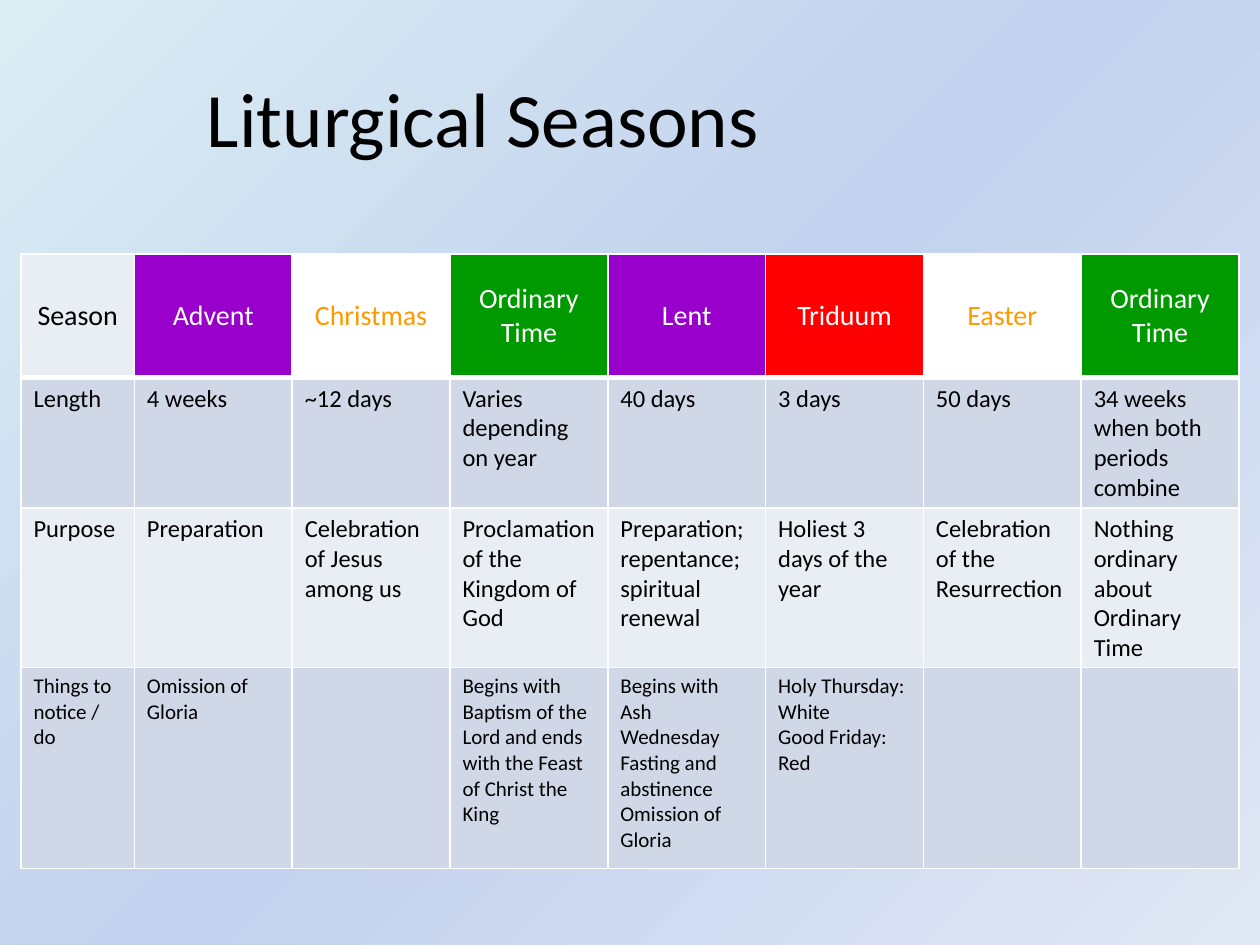
from copy import deepcopy

from pptx import Presentation
from pptx.dml.color import RGBColor
from pptx.enum.text import MSO_ANCHOR as Anchor, PP_ALIGN as Align
from pptx.oxml import parse_xml
from pptx.oxml.ns import nsdecls, qn
from pptx.util import Pt

BLACK = RGBColor(0, 0, 0)
WHITE = RGBColor(255, 255, 255)
PURPLE = RGBColor(0x99, 0x00, 0xCC)
GREEN = RGBColor(0x00, 0x99, 0x00)
RED = RGBColor(0xFF, 0x00, 0x00)
GOLD = RGBColor(0xFF, 0x99, 0x00)
PALE = RGBColor(0xE9, 0xED, 0xF4)
BLUE = RGBColor(0xD0, 0xD8, 0xE8)
SKY = [
    (0, RGBColor(0xDB, 0xEE, 0xF4)),
    (0.5, RGBColor(0xC2, 0xD1, 0xED)),
    (1, RGBColor(0xE1, 0xE8, 0xF5)),
]
FONT = "Calibri"

SEASONS = [
    ("Season", PALE, BLACK),
    ("Advent", PURPLE, WHITE),
    ("Christmas", WHITE, GOLD),
    ("Ordinary Time", GREEN, WHITE),
    ("Lent", PURPLE, WHITE),
    ("Triduum", RED, WHITE),
    ("Easter", WHITE, GOLD),
    ("Ordinary Time", GREEN, WHITE),
]
DETAILS = [
    (14, BLUE, [
        "Length", "4 weeks", "~12 days", "Varies depending on year",
        "40 days", "3 days", "50 days", "34 weeks when both periods combine",
    ]),
    (14, PALE, [
        "Purpose", "Preparation", "Celebration of Jesus among us",
        "Proclamation of the Kingdom of God",
        "Preparation; repentance; spiritual renewal",
        "Holiest 3 days of the year", "Celebration of the Resurrection",
        "Nothing ordinary about Ordinary Time",
    ]),
    (12, BLUE, [
        "Things to notice / do", "Omission of Gloria", "",
        "Begins with Baptism of the Lord and ends with the Feast of Christ the King",
        "Begins with Ash Wednesday\nFasting and abstinence\nOmission of Gloria",
        "Holy Thursday: White\nGood Friday: Red", "", "",
    ]),
]
ROW_HEIGHTS = [70.5, 48, 79, 115]
LABEL_WIDTH = 64.8


def paint_background(page):
    """Fill the page with a diagonal gradient of three colours."""
    fill = page.background.fill
    fill.gradient()
    stops = page.element.find(".//" + qn("a:gsLst"))
    stops.append(deepcopy(stops[-1]))
    for stop, (position, color) in zip(fill.gradient_stops, SKY):
        stop.position = position
        stop.color.rgb = color
    fill.gradient_angle = 315


def write_text(frame, text, size, color, align):
    """Write the lines of text as paragraphs in one style."""
    frame.text = text
    for para in frame.paragraphs:
        para.alignment = align
        para.font.name = FONT
        para.font.size = Pt(size)
        para.font.color.rgb = color


def add_title(page, left, top, width, height):
    """Place the centred heading in its box."""
    frame = page.shapes.add_textbox(Pt(left), Pt(top), Pt(width), Pt(height)).text_frame
    frame.word_wrap = True
    frame.vertical_anchor = Anchor.MIDDLE
    write_text(frame, "Liturgical Seasons", 44, BLACK, Align.CENTER)


def style_cell(cell, fill, bottom):
    """Give a cell white borders and a solid fill."""
    borders = cell._tc.get_or_add_tcPr()
    for side, width in (("L", 1), ("R", 1), ("T", 1), ("B", bottom)):
        borders.append(parse_xml(
            f'<a:ln{side} {nsdecls("a")} w="{Pt(width)}"><a:solidFill>'
            f'<a:srgbClr val="{WHITE}"/></a:solidFill></a:ln{side}>'
        ))
    cell.fill.solid()
    cell.fill.fore_color.rgb = fill


def add_seasons_table(page, left, top, width, height):
    """Place the table with a header of seasons and rows of details."""
    count = len(SEASONS)
    table = page.shapes.add_table(
        len(ROW_HEIGHTS), count, Pt(left), Pt(top), Pt(width), Pt(height)
    ).table
    for row, row_height in zip(table.rows, ROW_HEIGHTS):
        row.height = Pt(row_height)
    for index, column in enumerate(table.columns):
        column.width = Pt((width - LABEL_WIDTH) / (count - 1) if index else LABEL_WIDTH)
    for index, (name, fill, color) in enumerate(SEASONS):
        cell = table.cell(0, index)
        style_cell(cell, fill, 3)
        cell.vertical_anchor = Anchor.MIDDLE
        write_text(cell.text_frame, name, 16, color, Align.CENTER)
    for number, (size, fill, texts) in enumerate(DETAILS, 1):
        for index, text in enumerate(texts):
            cell = table.cell(number, index)
            style_cell(cell, fill, 1)
            write_text(cell.text_frame, text, size, BLACK, Align.LEFT)


def main():
    """Build the deck and save it."""
    deck = Presentation()
    deck.slide_width, deck.slide_height = Pt(720), Pt(540)
    page = deck.slides.add_slide(deck.slide_layouts[6])
    paint_background(page)
    add_title(page, 36, 21.6, 480, 90)
    add_seasons_table(page, 12, 145.2, 696, sum(ROW_HEIGHTS))
    deck.save("out.pptx")


if __name__ == "__main__":
    main()
